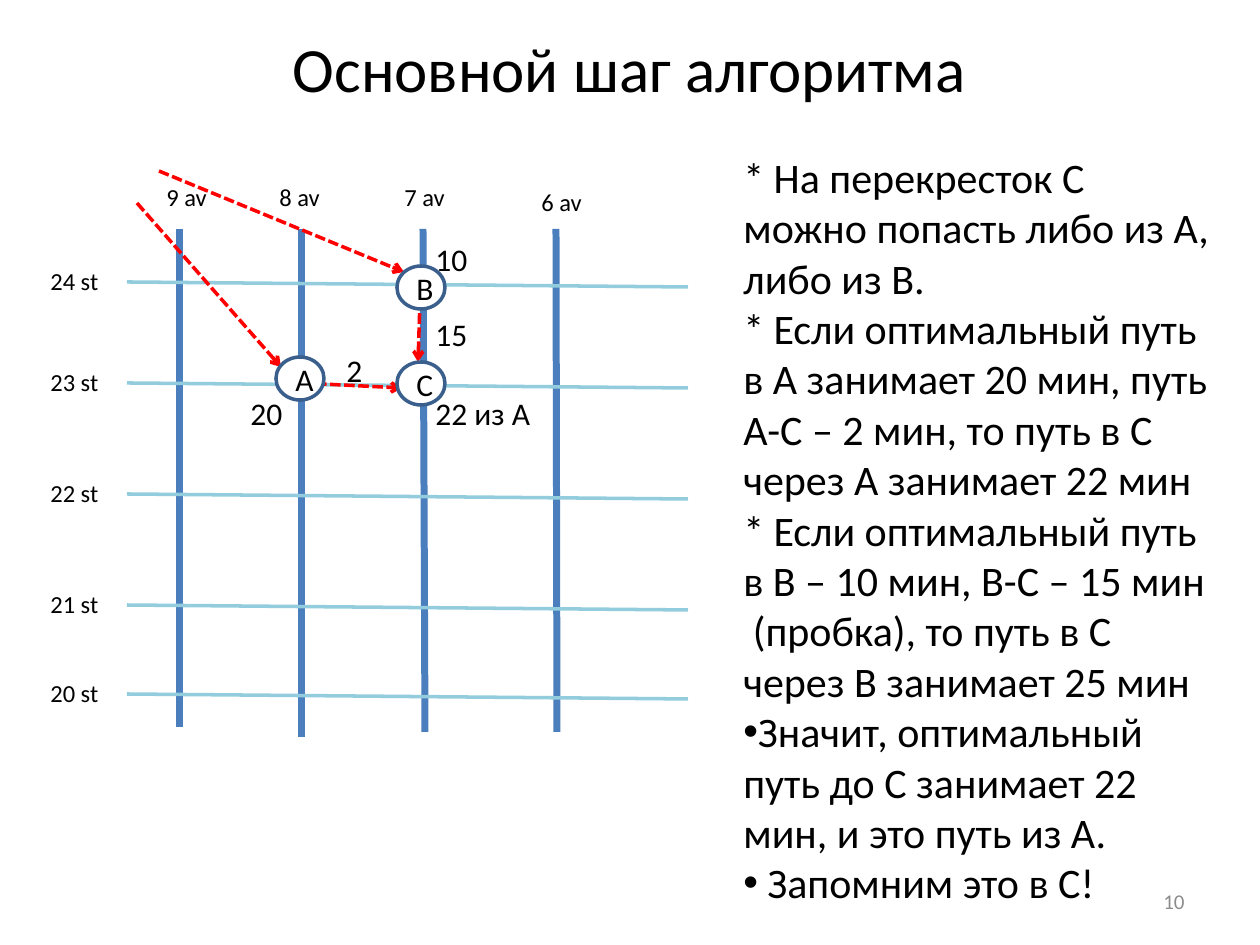
import pptx
import pptx.util
import pptx.dml.color
import pptx.enum.dml
import pptx.enum.shapes
import pptx.enum.text
import pptx.oxml.ns
import lxml.etree

PX = 914400 / 126
FONT = "Calibri"
COLORS = {
    "text": "000000", "muted": "8C8C8C", "paper": "FFFFFF", "avenue": "4B7EBC",
    "street": "93CDDD", "path": "FF0000", "node": "3A5F8C",
}
ALIGN = pptx.enum.text.PP_ALIGN
ANCHOR = pptx.enum.text.MSO_ANCHOR


def emu(*lengths):
    return [pptx.util.Emu(round(length * PX)) for length in lengths]


def color(name):
    return pptx.dml.color.RGBColor.from_string(COLORS[name])


def element(tag, **attributes):
    return lxml.etree.Element(pptx.oxml.ns.qn(tag), attributes)


class Painter:
    """Holds the style and the shape collection being drawn on."""

    def __init__(self, page):
        self.page = page
        self.shapes = page.shapes

    def start_group(self):
        self.shapes = self.page.shapes.add_group_shape().shapes

    def end_group(self):
        self.shapes = self.page.shapes

    def line(self, start, end, tint, width, arrow=False):
        line = self.shapes.add_connector(
            pptx.enum.shapes.MSO_CONNECTOR.STRAIGHT, *emu(*start, *end))
        line.line.color.rgb = color(tint)
        line.line.width = pptx.util.Pt(width)
        properties = line._element.spPr
        if arrow:
            line.line.dash_style = pptx.enum.dml.MSO_LINE.SQUARE_DOT
            outline = properties.find(pptx.oxml.ns.qn("a:ln"))
            outline.find(pptx.oxml.ns.qn("a:prstDash")).set("val", "sysDash")
            outline.append(element("a:tailEnd", type="arrow"))
        properties.append(element("a:effectLst"))

    def fill_paragraph(self, paragraph, lines, size, tint="text", align=ALIGN.LEFT):
        for number, line in enumerate(lines):
            if number:
                paragraph.add_line_break()
            paragraph.add_run().text = line
        paragraph.alignment = align
        paragraph.font.name = FONT
        paragraph.font.size = pptx.util.Pt(size)
        paragraph.font.color.rgb = color(tint)

    def text(self, place, paragraphs, size, tint="text", align=ALIGN.LEFT,
             wrap=True, anchor=ANCHOR.TOP):
        """Each paragraph is a pair: its lines, and whether it has a bullet."""
        frame = self.shapes.add_textbox(*emu(*place)).text_frame
        frame.word_wrap = wrap
        frame.vertical_anchor = anchor
        for number, (lines, bullet) in enumerate(paragraphs):
            paragraph = frame.add_paragraph() if number else frame.paragraphs[0]
            self.fill_paragraph(paragraph, lines, size, tint, align)
            if bullet:
                properties = paragraph._p.get_or_add_pPr()
                properties.insert(0, element("a:buFont", typeface="Arial"))
                properties.insert(1, element("a:buChar", char="•"))

    def label(self, place, words, size, **options):
        self.text(place, [([words], False)], size, **options)

    def node(self, place, name):
        node = self.shapes.add_shape(
            pptx.enum.shapes.MSO_SHAPE.OVAL, *emu(*place))
        node.shadow.inherit = False
        node.fill.solid()
        node.fill.fore_color.rgb = color("paper")
        node.line.color.rgb = color("node")
        node.line.width = pptx.util.Pt(2)
        node.text_frame.vertical_anchor = ANCHOR.MIDDLE
        self.fill_paragraph(node.text_frame.paragraphs[0], [name], 18,
                            align=ALIGN.CENTER)


def main():
    deck = pptx.Presentation()
    deck.slide_width, deck.slide_height = emu(1260, 945)
    painter = Painter(deck.slides.add_slide(deck.slide_layouts[6]))

    # Street map: name, position, far end, label position
    avenues = [("9 av", 180, (180, 727), (154, 176)),
               ("8 av", 302, (302, 737), (267, 176)),
               ("7 av", 423, (425, 732), (392, 176)),
               ("6 av", 556, (557, 732), (529, 181))]
    streets = [("20 st", 694), ("21 st", 605), ("22 st", 494),
               ("23 st", 383), ("24 st", 282)]
    painter.start_group()
    for _, x, end, _ in avenues:
        painter.line((x, 229), end, "avenue", 4)
    for _, y in streets:
        painter.line((127, y), (688, y + 5), "street", 2)
    for name, y in streets:
        painter.label((38, y - 22, 74, 43), name, 14, wrap=False)
    for name, _, _, corner in avenues:
        painter.label((*corner, 67, 43), name, 14, wrap=False)

    # Paths between crossings
    for start, end in [((302, 383), (402, 388)), ((421, 271), (418, 362)),
                       ((137, 203), (281, 367)), ((159, 171), (404, 272))]:
        painter.line(start, end, "path", 2, arrow=True)
    painter.end_group()

    # Title and explanation
    painter.label((21, 23, 1217, 89), "Основной шаг алгоритма", 36, align=ALIGN.CENTER)
    painter.text((731, 145, 493, 776), [
        (["* На перекресток C можно попасть либо из A, либо из B."], False),
        (["* Если оптимальный путь в A занимает 20 мин, путь A-C – 2 мин, "
          "то путь в C через A занимает 22 мин",
          "* Если оптимальный путь в B – 10 мин, B-C – 15 мин",
          " (пробка), то путь в C через B занимает 25 мин"], False),
        (["Значит, оптимальный путь до C занимает 22 мин, и это путь из A."], True),
        ([" Запомним это в C!"], True),
    ], 24)

    # Crossings
    for name, x, y in [("A", 276, 357), ("B", 397, 266), ("C", 397, 362)]:
        painter.node((x, y, 48, 43), name)

    # Travel times
    for words, x, y, width, wrap in [
            ("20", 238, 388, 58, False), ("2", 334, 345, 58, True),
            ("15", 423, 309, 58, True), ("10", 423, 234, 58, True),
            ("22 из A", 423, 388, 121, False)]:
        painter.label((x, y, width, 50), words, 18, wrap=wrap)

    # Page number
    painter.label((903, 876, 294, 50), "10", 12, tint="muted",
                  align=ALIGN.RIGHT, anchor=ANCHOR.MIDDLE)
    deck.save("out.pptx")


if __name__ == "__main__":
    main()
